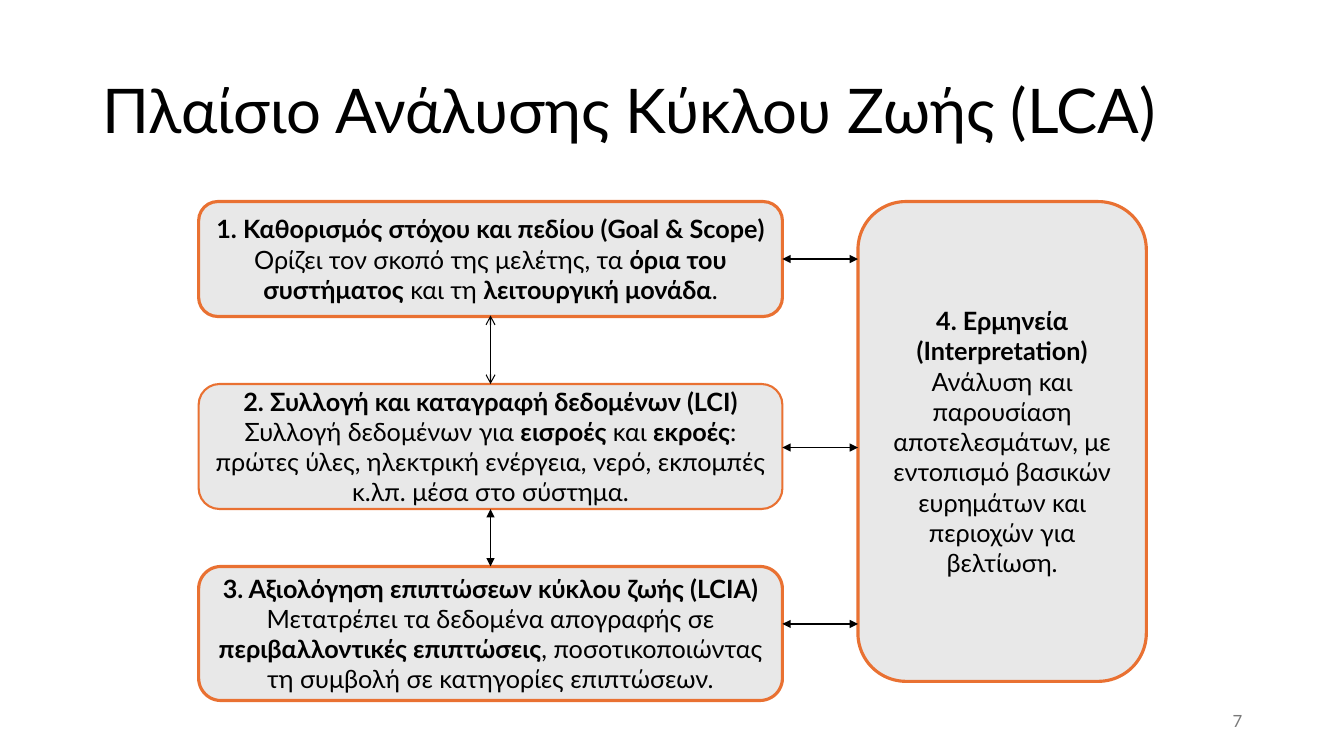
from lxml.etree import SubElement
from pptx import Presentation
from pptx.dml.color import RGBColor
from pptx.enum.shapes import MSO_CONNECTOR, MSO_SHAPE
from pptx.enum.text import MSO_ANCHOR, PP_ALIGN
from pptx.oxml.ns import qn
from pptx.util import Inches, Pt

BLACK = RGBColor(0x00, 0x00, 0x00)
GREY = RGBColor(0x79, 0x79, 0x79)
PALE = RGBColor(0xE8, 0xE8, 0xE8)
ORANGE = RGBColor(0xE9, 0x71, 0x32)
FONT = "Lato"

STEP_LEFT, STEP_WIDTH = 1.97, 5.79
STEP_RIGHT = STEP_LEFT + STEP_WIDTH
STEP_MIDDLE = STEP_LEFT + STEP_WIDTH / 2
RESULT_LEFT = 8.51

STEPS = [
    (2, 1.14, 2.25, "1. Καθορισμός στόχου και πεδίου (Goal & Scope)", [
        ("Ορίζει τον σκοπό της μελέτης, τα ", False),
        ("όρια του συστήματος", True),
        (" και τη ", False),
        ("λειτουργική μονάδα", True),
        (".", False),
    ]),
    (3.81, 1.24, 1.5, "2. Συλλογή και καταγραφή δεδομένων (LCI)", [
        ("Συλλογή δεδομένων για ", False),
        ("εισροές", True),
        (" και ", False),
        ("εκροές", True),
        (": πρώτες ύλες, ηλεκτρική ενέργεια, νερό, εκπομπές κ.λπ. μέσα στο σύστημα.", False),
    ]),
    (5.62, 1.33, 2.25, "3. Αξιολόγηση επιπτώσεων κύκλου ζωής (LCIA)", [
        ("Μετατρέπει τα δεδομένα απογραφής σε ", False),
        ("περιβαλλοντικές επιπτώσεις", True),
        (", ποσοτικοποιώντας τη συμβολή σε κατηγορίες επιπτώσεων.", False),
    ]),
]
RESULT_SPANS = [
    ("Ανάλυση και παρουσίαση αποτελεσμάτων, με εντοπισμό βασικών ευρημάτων "
     "και περιοχών για βελτίωση.", False),
]


def add_span(para, text, size, color=BLACK, bold=False):
    span = para.add_run()
    span.text = text
    span.font.name = FONT
    span.font.size = Pt(size)
    span.font.bold = bold
    span.font.color.rgb = color


def prepare_para(box, align):
    frame = box.text_frame
    frame.word_wrap = True
    frame.vertical_anchor = MSO_ANCHOR.MIDDLE
    para = frame.paragraphs[0]
    para.alignment = align
    return para


def add_label(page, area, text, size, color, align, spacing=1.0):
    box = page.shapes.add_textbox(*map(Inches, area))
    para = prepare_para(box, align)
    para.line_spacing = spacing
    add_span(para, text, size, color)


def add_stage(page, area, line_width, heading, spans):
    box = page.shapes.add_shape(MSO_SHAPE.ROUNDED_RECTANGLE, *map(Inches, area))
    box.shadow.inherit = False
    box.fill.solid()
    box.fill.fore_color.rgb = PALE
    box.line.color.rgb = ORANGE
    box.line.width = Pt(line_width)
    para = prepare_para(box, PP_ALIGN.CENTER)
    add_span(para, heading, 18, bold=True)
    para.add_line_break()
    for text, bold in spans:
        add_span(para, text, 18, bold=bold)


def add_double_arrow(page, start, end, width=1, tip="triangle"):
    arrow = page.shapes.add_connector(
        MSO_CONNECTOR.STRAIGHT, *map(Inches, (*start, *end)))
    arrow.line.color.rgb = BLACK
    arrow.line.width = Pt(width)
    properties = arrow.element.spPr
    outline = properties.find(qn("a:ln"))
    for tag in ("a:headEnd", "a:tailEnd"):
        SubElement(outline, qn(tag), type=tip)
    SubElement(properties, qn("a:effectLst"))


def main():
    deck = Presentation()
    deck.slide_width, deck.slide_height = Inches(13.33), Inches(7.5)
    page = deck.slides.add_slide(deck.slide_layouts[6])

    add_label(page, (0.92, 0.4, 11.5, 1.45), "Πλαίσιο Ανάλυσης Κύκλου Ζωής (LCA)",
              44, BLACK, PP_ALIGN.LEFT, 0.9)

    for top, height, line_width, heading, spans in STEPS:
        add_stage(page, (STEP_LEFT, top, STEP_WIDTH, height), line_width, heading, spans)
    add_stage(page, (RESULT_LEFT, 2, 2.86, 4.76), 2.25,
              "4. Ερμηνεία (Interpretation)", RESULT_SPANS)

    add_double_arrow(page, (STEP_MIDDLE, 3.13), (STEP_MIDDLE, 3.81), 0.75, "arrow")
    add_double_arrow(page, (STEP_MIDDLE, 5.05), (STEP_MIDDLE, 5.62))
    for level in (2.57, 4.44, 6.19):
        add_double_arrow(page, (STEP_RIGHT, level), (RESULT_LEFT, level))

    add_label(page, (9.42, 6.95, 3, 0.4), "7", 12, GREY, PP_ALIGN.RIGHT)
    deck.save("out.pptx")


if __name__ == "__main__":
    main()
